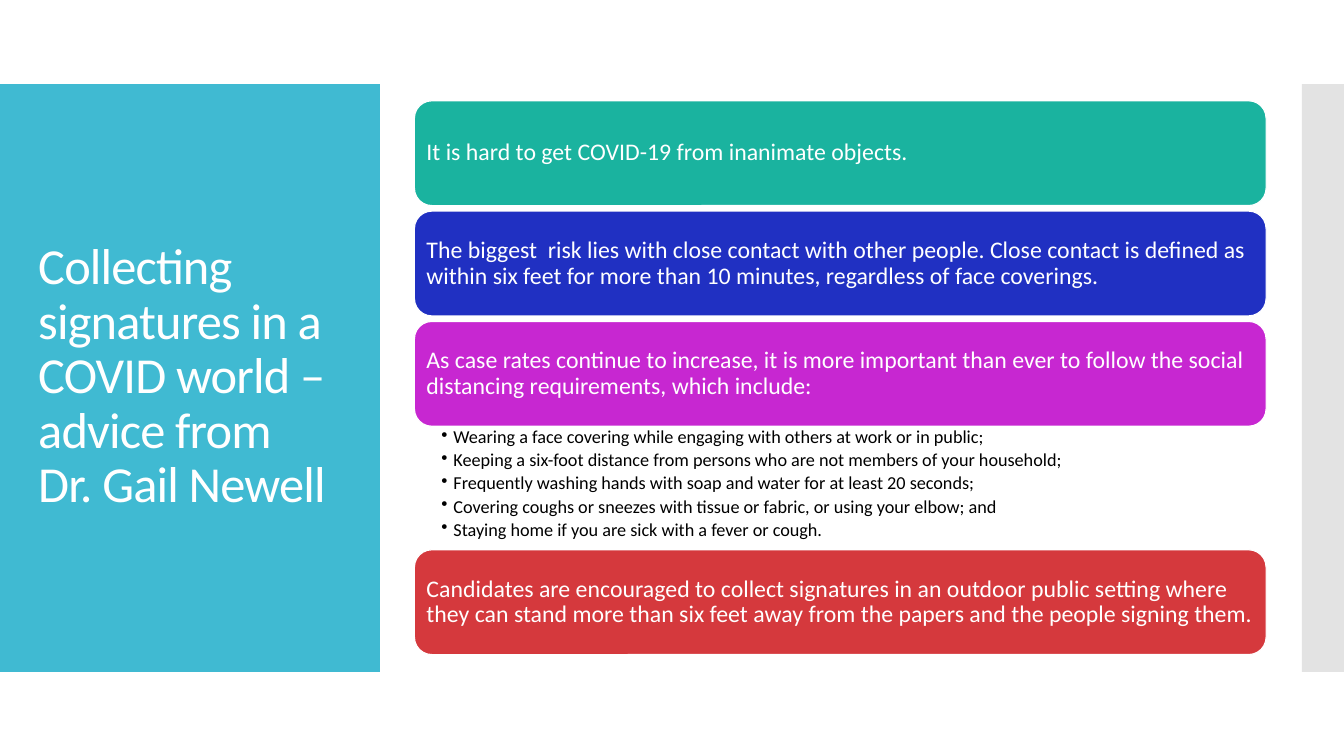
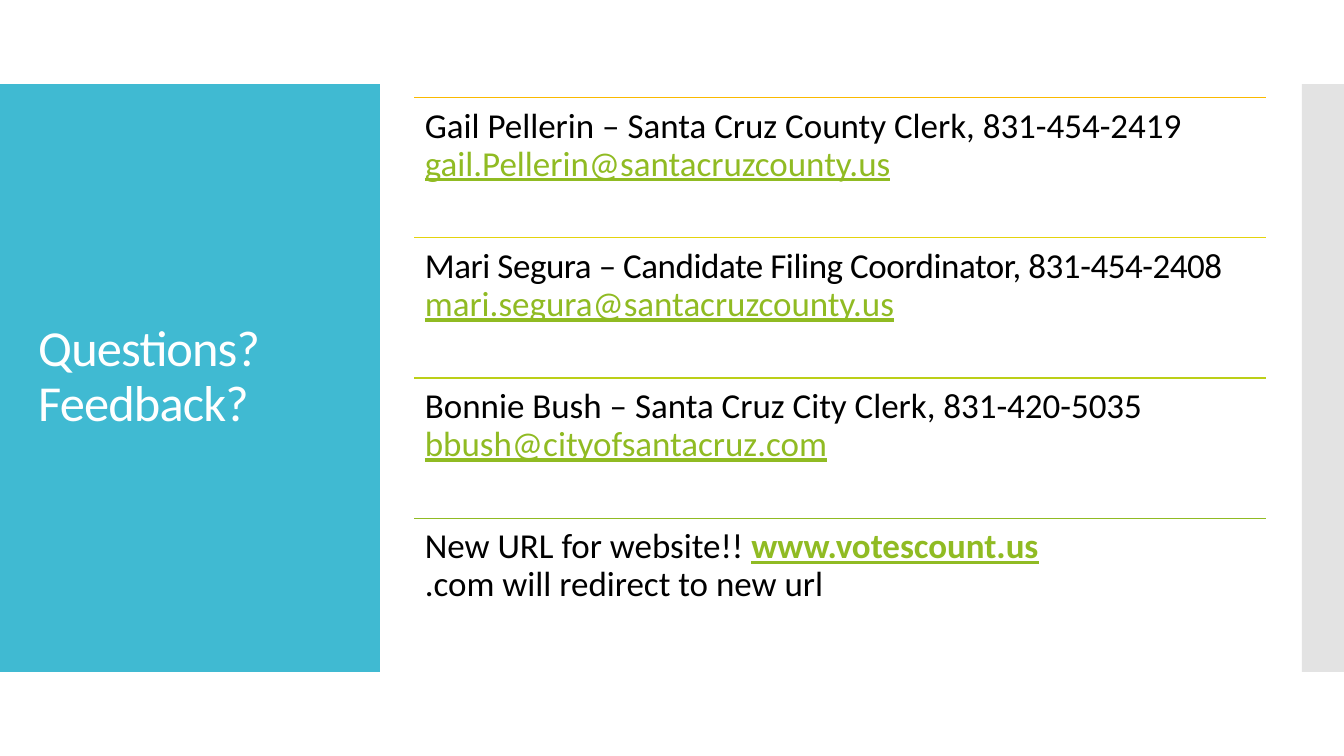
from dataclasses import dataclass, field
from typing import Any

from lxml import etree
from pptx import Presentation
from pptx import util as u
from pptx.dml import color as dml
from pptx.enum import shapes, text
from pptx.oxml import ns

Pt = u.Pt


@dataclass(frozen=True)
class Theme:
    font: str = "Calibri"
    white: str = "FFFFFF"
    black: str = "000000"
    band: str = "40BAD2"
    edge: str = "C8C8C8"
    link: str = "90BB23"
    title: float = 36
    card: float = 17
    item: float = 13
    entry: float = 25
    rule: float = 0.85
    lead: float = 0.9


@dataclass(frozen=True)
class Box:
    left: float
    top: float
    width: float
    height: float

    def args(self) -> list[int]:
        return [Pt(n) for n in (self.left, self.top, self.width, self.height)]


@dataclass(frozen=True)
class Span:
    words: str
    color: str
    form: dict[str, Any] = field(default_factory=dict)
    track: int = 0


@dataclass(frozen=True)
class Card:
    words: str
    fill: str
    items: tuple[str, ...] = ()


@dataclass(frozen=True)
class Entry:
    rule: str
    lines: list[list[Span]]


T = Theme()
BAND = Box(0, 60, 271.4, 420)
EDGE = Box(930, 60, 30, 420)
HEAD = Box(20.2, 88.6, 231.8, 362)
LEFT, WIDE = 296, 608.4
TOP, TALL, GAP, LIST = 72, 74.9, 3.9, 88.2
START, STEP = 69.8, 100.1

CARDS = [
    Card("It is hard to get COVID-19 from inanimate objects.", "1AB39F"),
    Card("The biggest  risk lies with close contact with other people. Close contact is "
         "defined as within six feet for more than 10 minutes, regardless of face coverings.",
         "2030C2"),
    Card("As case rates continue to increase, it is more important than ever to follow "
         "the social distancing requirements, which include:", "C727D1", (
             "Wearing a face covering while engaging with others at work or in public;",
             "Keeping a six-foot distance from persons who are not members of your household;",
             "Frequently washing hands with soap and water for at least 20 seconds;",
             "Covering coughs or sneezes with tissue or fabric, or using your elbow; and",
             "Staying home if you are sick with a fever or cough.")),
    Card("Candidates are encouraged to collect signatures in an outdoor public setting where "
         "they can stand more than six feet away from the papers and the people signing them.",
         "D5393D"),
]


def plain(words: str, track: int = 0) -> Span:
    return Span(words, T.black, track=track)


def link(words: str, bold: bool = False) -> Span:
    return Span(words, T.link, {"underline": True, "bold": bold})


ENTRIES = [
    Entry("FAB900", [[plain("Gail Pellerin – Santa Cruz County Clerk, 831-454-2419")],
                     [link("gail.Pellerin@santacruzcounty.us")]]),
    Entry("E4D30D", [[plain("Mari Segura – Candidate Filing Coordinator, 831-454-2408", -30)],
                     [link("mari.segura@santacruzcounty.us")]]),
    Entry("BCCF18", [[plain("Bonnie Bush – Santa Cruz City Clerk, 831-420-5035")],
                     [link("bbush@cityofsantacruz.com")]]),
    Entry("90BB23", [[plain("New URL for website!! "), link("www.votescount.us", True)],
                     [plain(".com will redirect to new url")]]),
]


def rgb(code: str) -> dml.RGBColor:
    return dml.RGBColor.from_string(code)


def apply(thing: Any, form: dict[str, Any]) -> None:
    for name, value in form.items():
        setattr(thing, name, value)


def setup(frame: Any, pads: tuple[float, ...], middle: bool = False) -> None:
    sides = ("margin_left", "margin_top", "margin_right", "margin_bottom")
    anchor = text.MSO_ANCHOR.MIDDLE if middle else text.MSO_ANCHOR.TOP
    apply(frame, {"word_wrap": True, "vertical_anchor": anchor,
                  **{side: Pt(pad) for side, pad in zip(sides, pads)}})


def write(para: Any, lines: list[list[Span]], size: float, after: float = 0) -> None:
    apply(para, {"line_spacing": T.lead, "space_after": Pt(after),
                 "alignment": text.PP_ALIGN.LEFT})
    for row, line in enumerate(lines):
        if row:
            para.add_line_break()
        for span in line:
            run = para.add_run()
            run.text = span.words
            apply(run.font, {"name": T.font, "size": Pt(size), **span.form})
            run.font.color.rgb = rgb(span.color)
            if span.track:
                run._r.get_or_add_rPr().set("spc", str(span.track))


def block(slide: Any, kind: Any, box: Box, fill: str) -> Any:
    shape = slide.shapes.add_shape(kind, *box.args())
    shape.shadow.inherit = False
    shape.fill.solid()
    shape.fill.fore_color.rgb = rgb(fill)
    shape.line.fill.background()
    return shape


def start(deck: Any, title: list[str]) -> Any:
    slide = deck.slides.add_slide(deck.slide_layouts[6])
    rect = shapes.MSO_SHAPE.RECTANGLE
    block(slide, rect, BAND, T.band)
    edge = block(slide, rect, EDGE, T.edge)
    tint = edge._element.spPr.find(".//" + ns.qn("a:srgbClr"))
    etree.SubElement(tint, ns.qn("a:alpha")).set("val", "50000")
    frame = slide.shapes.add_textbox(*HEAD.args()).text_frame
    setup(frame, (7.2, 3.6, 7.2, 3.6), True)
    lines = [[Span(line, T.white, track=-60)] for line in title]
    write(frame.paragraphs[0], lines, T.title)
    return slide


def bullets(slide: Any, box: Box, items: tuple[str, ...]) -> None:
    frame = slide.shapes.add_textbox(*box.args()).text_frame
    setup(frame, (19.3, 1.3, 9.3, 1.3))
    for index, item in enumerate(items):
        para = frame.add_paragraph() if index else frame.paragraphs[0]
        write(para, [[plain(item)]], T.item, 2.4)
        props = para._p.get_or_add_pPr()
        props.set("marL", str(Pt(8.6)))
        props.set("indent", str(Pt(-8.6)))
        etree.SubElement(props, ns.qn("a:buChar")).set("char", "•")


def advise(deck: Any) -> None:
    slide = start(deck, ["Collecting signatures in a COVID world – advice from",
                         "Dr. Gail Newell"])
    top = TOP
    for card in CARDS:
        shape = block(slide, shapes.MSO_SHAPE.ROUNDED_RECTANGLE,
                      Box(LEFT, top, WIDE, TALL), card.fill)
        shape.line.color.rgb = rgb(T.white)
        shape.line.width = Pt(T.rule)
        setup(shape.text_frame, (5, 5, 5, 5), True)
        write(shape.text_frame.paragraphs[0], [[Span(card.words, T.white)]], T.card)
        top += TALL
        if card.items:
            bullets(slide, Box(LEFT, top, WIDE, LIST), card.items)
            top += LIST
        else:
            top += GAP


def rule(slide: Any, top: float, color: str) -> None:
    line = slide.shapes.add_connector(shapes.MSO_CONNECTOR.STRAIGHT, Pt(LEFT), Pt(top),
                                      Pt(LEFT + WIDE), Pt(top))
    line.line.color.rgb = rgb(color)
    line.line.width = Pt(T.rule)
    etree.SubElement(line._element.spPr, ns.qn("a:effectLst"))


def contact(deck: Any) -> None:
    slide = start(deck, ["Questions?", "Feedback?"])
    for index, entry in enumerate(ENTRIES):
        top = START + index * STEP
        rule(slide, top, entry.rule)
        frame = slide.shapes.add_textbox(*Box(LEFT, top, WIDE, STEP).args()).text_frame
        setup(frame, (7.5, 7.5, 7.5, 7.5))
        write(frame.paragraphs[0], entry.lines, T.entry)


def main() -> None:
    deck = Presentation()
    apply(deck, {"slide_width": Pt(960), "slide_height": Pt(540)})
    advise(deck)
    contact(deck)
    deck.save("out.pptx")


if __name__ == "__main__":
    main()
